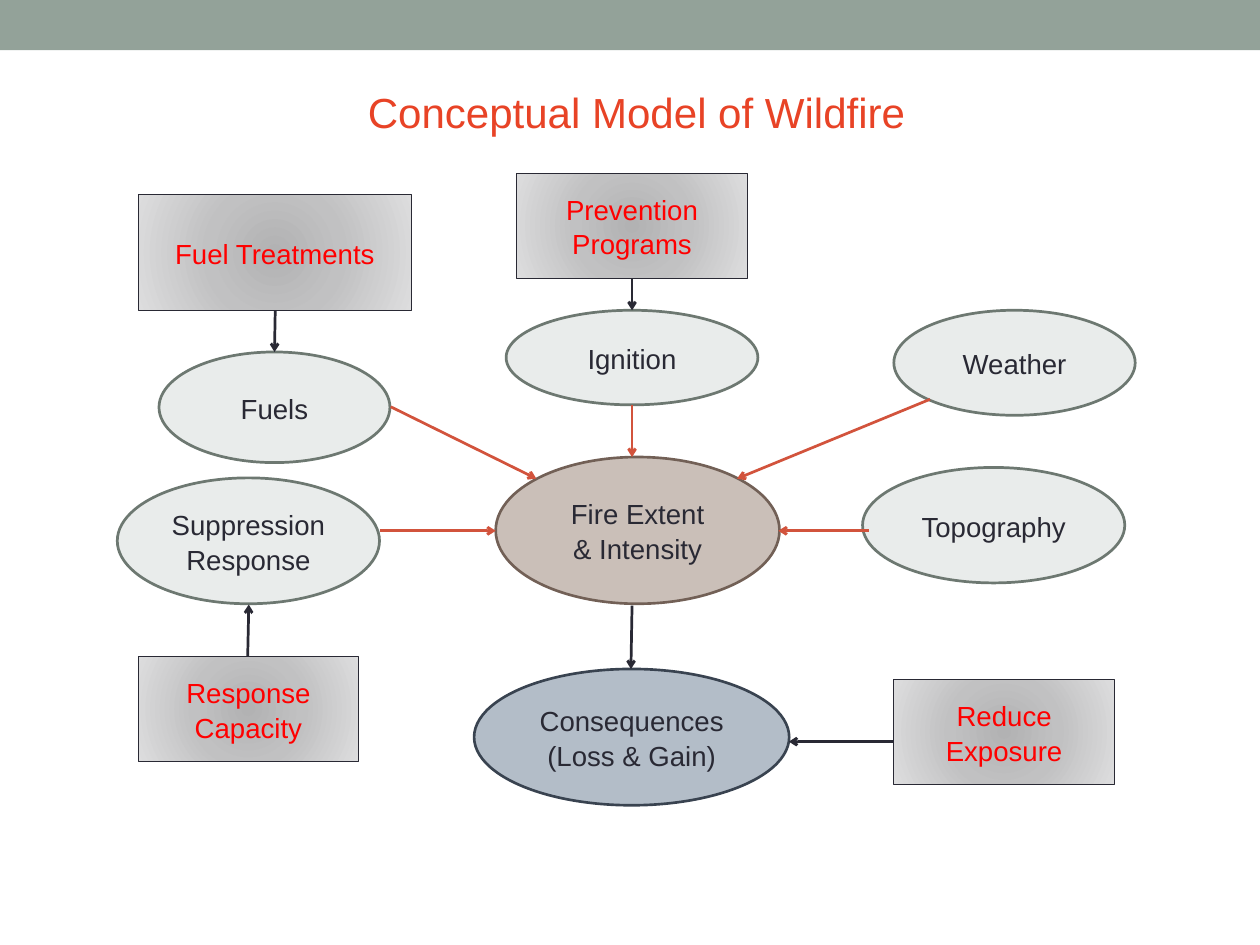
from pptx import Presentation
from pptx.enum.shapes import MSO_CONNECTOR as Connector, MSO_SHAPE as Shape
from pptx.enum.text import MSO_ANCHOR as Anchor, PP_ALIGN as Align
from pptx.dml.color import RGBColor
from pptx.oxml import parse_xml
from pptx.oxml.ns import nsdecls, qn
from pptx.util import Cm, Pt

COLORS = {
    "band": "93A299", "title": "E84326", "ink": "292934", "action": "FF0000",
    "driver": "E9ECEB", "driver_edge": "6D7871",
    "fire": "CABFB8", "fire_edge": "726056",
    "outcome": "B3BDC8", "outcome_edge": "394350",
    "influence": "D2533C",
}
ACTION_STOPS = [(0, "B2B2B3"), (45, "C1C1C2"), (100, "DDDDDE")]

# Label, kind, left, top, width, height in cm; \v is a line break
FACTORS = [
    ("Topography", "driver", 23.16, 12.55, 7.04, 3.1),
    ("Fire Extent\v& Intensity", "fire", 13.31, 12.27, 7.62, 3.94),
    ("Weather", "driver", 24, 8.33, 6.48, 2.82),
    ("Fuels", "driver", 4.27, 9.45, 6.2, 2.97),
    ("Ignition", "driver", 13.59, 8.33, 6.76, 2.54),
    ("Suppression\vResponse", "driver", 3.15, 12.83, 7.04, 3.38),
    ("Consequences\n(Loss & Gain)", "outcome", 12.73, 17.96, 8.46, 3.66),
]
ACTIONS = [
    ("Prevention\vPrograms", 13.87, 4.65, 6.2, 2.82),
    ("Fuel Treatments", 3.71, 5.23, 7.34, 3.1),
    ("Response Capacity", 3.71, 17.63, 5.92, 2.82),
    ("Reduce Exposure", 24, 18.24, 5.92, 2.82),
]
# Colour, start x, start y, end x, end y in cm
ARROWS = [
    ("influence", 16.97, 10.87, 16.97, 12.27),
    ("influence", 10.49, 10.92, 14.4, 12.85),
    ("influence", 24.97, 10.72, 19.79, 12.85),
    ("influence", 23.32, 14.25, 20.9, 14.25),
    ("influence", 10.19, 14.25, 13.31, 14.25),
    ("ink", 6.65, 17.63, 6.68, 16.23),
    ("ink", 16.97, 7.49, 16.97, 8.33),
    ("ink", 7.39, 8.33, 7.37, 9.45),
    ("ink", 24, 19.91, 21.18, 19.91),
    ("ink", 16.97, 16.26, 16.94, 17.96),
]


def color(name):
    return RGBColor.from_string(COLORS[name])


def write(box, text, size, ink, anchor=Anchor.MIDDLE):
    frame = box.text_frame
    frame.word_wrap = True
    frame.vertical_anchor = anchor
    frame.margin_left = frame.margin_right = Cm(0.33)
    frame.margin_top = frame.margin_bottom = Cm(0.18)
    frame.text = text
    for para in frame.paragraphs:
        para.alignment = Align.CENTER
        para.line_spacing = 1.05
        para.font.name = "Arial"
        para.font.size = Pt(size)
        para.font.color.rgb = color(ink)


def add_box(page, shape, place, fill=None, edge=None, weight=0):
    box = page.shapes.add_shape(shape, *map(Cm, place))
    box.shadow.inherit = False
    if fill:
        box.fill.solid()
        box.fill.fore_color.rgb = color(fill)
    else:
        box.fill.background()
    if edge:
        box.line.color.rgb = color(edge)
        box.line.width = Pt(weight)
    else:
        box.line.fill.background()
    return box


def add_title(page, text):
    box = page.shapes.add_textbox(Cm(3.23), Cm(2.08), Cm(27.74), Cm(2.11))
    write(box, text, 32, "title", Anchor.TOP)


def add_factor(page, text, kind, *place):
    weight = 2.08 if kind == "driver" else 2
    box = add_box(page, Shape.OVAL, place, kind, kind + "_edge", weight)
    write(box, text, 21, "ink")


def add_action(page, text, *place):
    box = add_box(page, Shape.RECTANGLE, place, edge="ink", weight=0.75)
    stops = "".join(
        f'<a:gs pos="{pos * 1000}"><a:srgbClr val="{shade}"/></a:gs>'
        for pos, shade in ACTION_STOPS)
    gradient = parse_xml(
        f'<a:gradFill {nsdecls("a")} rotWithShape="1"><a:gsLst>{stops}</a:gsLst>'
        '<a:path path="circle"><a:fillToRect l="50000" t="50000" r="50000" b="50000"/>'
        '</a:path></a:gradFill>')
    properties = box._element.spPr
    properties.replace(properties.find(qn("a:noFill")), gradient)
    write(box, text, 21, "action")


def add_arrow(page, ink, *ends):
    arrow = page.shapes.add_connector(Connector.STRAIGHT, *map(Cm, ends))
    arrow.line.color.rgb = color(ink)
    arrow.line.width = Pt(2.08)
    arrow.line._get_or_add_ln().append(
        parse_xml(f'<a:tailEnd {nsdecls("a")} type="arrow"/>'))
    arrow._element.spPr.append(parse_xml(f'<a:effectLst {nsdecls("a")}/>'))


def main():
    deck = Presentation()
    deck.slide_width, deck.slide_height = Cm(33.83), Cm(25.37)
    page = deck.slides.add_slide(deck.slide_layouts[6])

    # Heading
    add_box(page, Shape.RECTANGLE, (0, 0, 33.83, 1.35), "band")
    add_title(page, "Conceptual Model of Wildfire")

    # Model
    for factor in FACTORS:
        add_factor(page, *factor)
    for action in ACTIONS:
        add_action(page, *action)
    for arrow in ARROWS:
        add_arrow(page, *arrow)

    deck.save("out.pptx")


if __name__ == "__main__":
    main()
